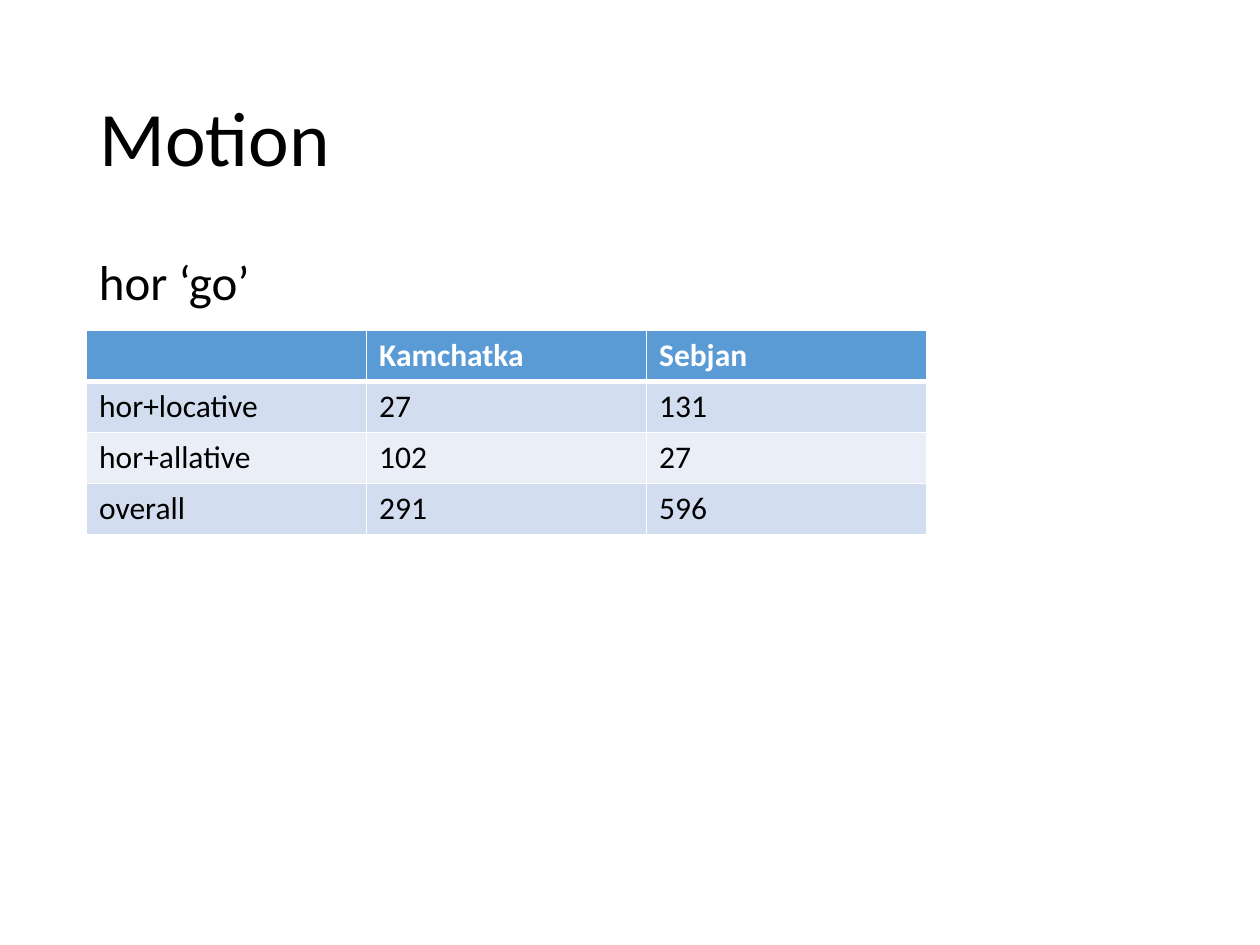
from lxml.etree import SubElement
from pptx import Presentation
from pptx.dml.color import RGBColor
from pptx.enum.text import MSO_ANCHOR as Anchor, PP_ALIGN as Align
from pptx.oxml.ns import qn
from pptx.util import Pt

FONT = "Calibri"
BLACK, WHITE = "000000", "FFFFFF"
HEADER_FILL = "5B9BD5"
BAND_FILLS = ("D2DEEF", "EAEFF7")
ROWS = (
    ("", "Kamchatka", "Sebjan"),
    ("hor+locative", "27", "131"),
    ("hor+allative", "102", "27"),
    ("overall", "291", "596"),
)


def color(value):
    """Turn a hex string into a colour."""
    return RGBColor.from_string(value)


def add_span(para, text, size, tint=BLACK, bold=False):
    """Add one formatted run to a paragraph."""
    span = para.add_run()
    span.text = text
    span.font.name = FONT
    span.font.size = Pt(size)
    span.font.bold = bold
    span.font.color.rgb = color(tint)


def fill_text(shape, box, text, size, anchor):
    """Place a text shape in its box and write its single line."""
    shape.left, shape.top, shape.width, shape.height = map(Pt, box)
    frame = shape.text_frame
    frame.word_wrap = True
    frame.vertical_anchor = anchor
    para = frame.paragraphs[0]
    para.alignment = Align.LEFT
    para.line_spacing = 0.9
    add_span(para, text, size)


def add_border(cell, side, width):
    """Draw a white border on one side of a cell."""
    properties = cell._tc.get_or_add_tcPr()
    line = SubElement(properties, qn(f"a:ln{side}"), w=str(Pt(width)))
    fill = SubElement(line, qn("a:solidFill"))
    SubElement(fill, qn("a:srgbClr"), val=WHITE)


def add_counts_table(page, box):
    """Add the banded table of verb counts, in equal rows and columns."""
    table = page.shapes.add_table(len(ROWS), len(ROWS[0]), *map(Pt, box)).table
    for column in table.columns:
        column.width = Pt(box[2] / len(ROWS[0]))
    for index, texts in enumerate(ROWS):
        table.rows[index].height = Pt(box[3] / len(ROWS))
        header = index == 0
        top, bottom = (3 if index == 1 else 1), (3 if header else 1)
        for cell, text in zip(table.rows[index].cells, texts):
            for side, width in zip("LRTB", (1, 1, top, bottom)):
                add_border(cell, side, width)
            cell.fill.solid()
            band = HEADER_FILL if header else BAND_FILLS[(index - 1) % 2]
            cell.fill.fore_color.rgb = color(band)
            if text:
                tint = WHITE if header else BLACK
                add_span(cell.text_frame.paragraphs[0], text, 18, tint, header)


def build_motion_slide(deck):
    """Build the slide with its title, example verb and counts."""
    page = deck.slides.add_slide(deck.slide_layouts[5])
    page.background.fill.solid()
    page.background.fill.fore_color.rgb = color(WHITE)
    fill_text(page.shapes.title, (49.5, 28.75, 621, 104.4), "Motion", 44, Anchor.MIDDLE)
    body_box = (49.5, 143.75, 621, 342.6)
    body = page.shapes.add_textbox(*map(Pt, body_box))
    fill_text(body, body_box, "hor ‘go’", 28, Anchor.TOP)
    body.text_frame.paragraphs[0].space_before = Pt(10)
    add_counts_table(page, (49.5, 188.8, 480, 116.8))


def main():
    """Create the deck and save it."""
    deck = Presentation()
    deck.slide_width, deck.slide_height = Pt(720), Pt(540)
    build_motion_slide(deck)
    deck.save("out.pptx")


if __name__ == "__main__":
    main()
